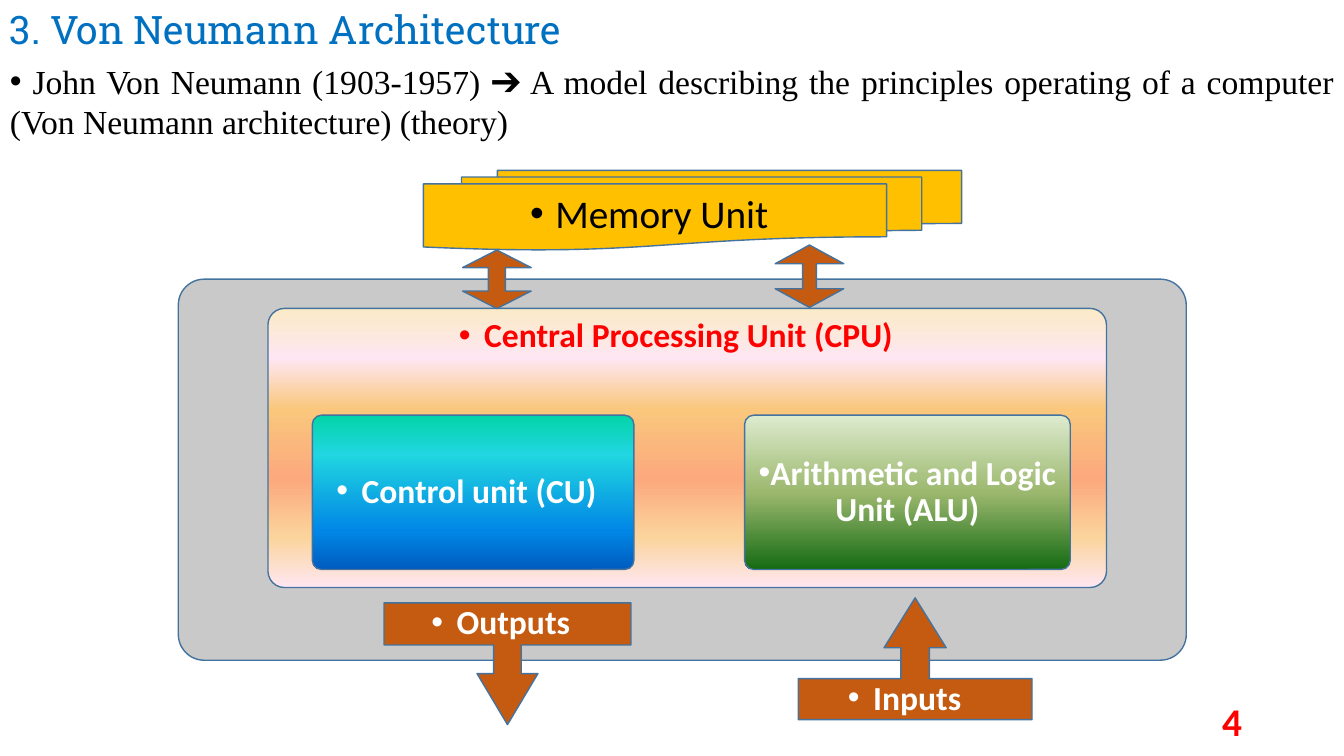
from lxml.etree import SubElement
from pptx import Presentation
from pptx.dml.color import RGBColor
from pptx.enum.shapes import MSO_SHAPE as Preset
from pptx.enum.text import MSO_ANCHOR as Anchor, PP_ALIGN as Align
from pptx.oxml.ns import qn
from pptx.util import Pt

SLIDE_WIDTH, SLIDE_HEIGHT = 960, 540
OUTLINE, GREY, ORANGE, GOLD = "43739E", "C9C9C9", "C55A11", "FFC000"
WHITE, BLACK, RED, BLUE = "FFFFFF", "000000", "FF0000", "0070C0"
CPU_STOPS = [(0, "FBEAC7"), (18, "FEE7F2"), (36, "FAC77D"),
             (61, "FBA97D"), (82, "FBD49C"), (100, "FEE7F2")]
ALU_STOPS = [(0, "DDEBCF"), (50, "9CB86E"), (100, "156B13")]
CONTROL_STOPS = [(0, "03D4A8"), (25, "21D6E0"), (75, "0087E6"), (100, "005CBF")]


def color(hex_string):
    return RGBColor.from_string(hex_string)


def set_gradient(shape, stops):
    """Vertical gradient running from the top to the bottom."""
    shape.fill.gradient()
    shape.fill.gradient_angle = 270
    stop_list = shape.fill._xPr.find(qn("a:gradFill")).find(qn("a:gsLst"))
    for stop in list(stop_list):
        stop_list.remove(stop)
    for percent, value in stops:
        stop = SubElement(stop_list, qn("a:gs"), pos=str(percent * 1000))
        SubElement(stop, qn("a:srgbClr"), val=value)


def write(shape, text, size, ink, font="Calibri", bold=False, align=Align.CENTER,
          anchor=Anchor.MIDDLE, bullet=True, hanging=18, spacing=0.9):
    frame = shape.text_frame
    frame.word_wrap = True
    frame.vertical_anchor = anchor
    paragraph = frame.paragraphs[0]
    paragraph.alignment = align
    paragraph.line_spacing = spacing
    if bullet:
        properties = paragraph._p.get_or_add_pPr()
        properties.set("marL", "0")
        properties.set("indent", str(-Pt(hanging)))
        SubElement(properties, qn("a:buFont"), typeface="Arial")
        SubElement(properties, qn("a:buChar"), char="•")
    run = paragraph.add_run()
    run.text = text
    run.font.name = font
    run.font.size = Pt(size)
    run.font.bold = bold
    run.font.color.rgb = color(ink)


def paint(shape, fill):
    """Outline the shape; fill is one colour or a list of gradient stops."""
    shape.shadow.inherit = False
    if isinstance(fill, str):
        shape.fill.solid()
        shape.fill.fore_color.rgb = color(fill)
    else:
        set_gradient(shape, fill)
    shape.line.color.rgb = color(OUTLINE)
    shape.line.width = Pt(1)


def add_block(slide, preset, box, fill, adjustments=()):
    shape = slide.shapes.add_shape(preset, *map(Pt, box))
    for index, value in enumerate(adjustments):
        shape.adjustments[index] = value
    paint(shape, fill)
    return shape


def add_two_way_arrow(slide, left, top, width, height, shaft_share, head_share=0.3):
    """Vertical arrow with a head at both ends; its right side mirrors its left."""
    center, bottom = left + width / 2, top + height
    shaft, head = width * shaft_share / 2, height * head_share
    side = [(width / 2, top + head), (shaft, top + head),
            (shaft, bottom - head), (width / 2, bottom - head)]
    points = [(center + reach, y) for reach, y in side] + [(center, bottom)]
    points += [(center - reach, y) for reach, y in reversed(side)]
    builder = slide.shapes.build_freeform(Pt(center), Pt(top))
    builder.add_line_segments([(Pt(x), Pt(y)) for x, y in points], close=True)
    paint(builder.convert_to_shape(), ORANGE)


def add_label(slide, box, text, size, ink, **style):
    write(slide.shapes.add_textbox(*map(Pt, box)), text, size, ink, **style)


def add_cpu(slide, left, top, width, height):
    add_block(slide, Preset.ROUNDED_RECTANGLE, (left, top, width, height),
              CPU_STOPS, [0.059])
    # Arithmetic and control units side by side
    units = [("Arithmetic and Logic Unit (ALU)", 340.5, 232.6, ALU_STOPS, 0),
             ("Control unit (CU)", 31.7, 229.7, CONTROL_STOPS, 18)]
    for text, offset, unit_width, stops, hanging in units:
        unit = add_block(slide, Preset.ROUNDED_RECTANGLE,
                         (left + offset, top + 76.3, unit_width, 110.2), stops, [0.059])
        write(unit, text, 24, WHITE, bold=True, hanging=hanging)
    add_label(slide, (left + 41, top + 3.6, 510.5, 36), "Central Processing Unit (CPU)",
              24, RED, bold=True, anchor=Anchor.TOP)


def add_ports(slide, left, top):
    """Input and output callouts on the lower edge of the computer."""
    ports = [("Inputs ", Preset.UP_ARROW_CALLOUT, 442.8, 227.6, 167,
              [0.233, 0.255, 0.41, 0.336]),
             ("Outputs", Preset.DOWN_ARROW_CALLOUT, 146.9, 231.2, 176.4,
              [0.227, 0.25, 0.419, 0.346])]
    for text, preset, across, down, width, adjustments in ports:
        port = add_block(slide, preset, (left + across, top + down, width, 87),
                         ORANGE, adjustments)
        write(port, text, 24, WHITE, bold=True)


def add_memory(slide, left, top, width, height):
    memory = add_block(slide, Preset.FLOWCHART_MULTIDOCUMENT,
                       (left, top, width, height), GOLD)
    write(memory, "Memory Unit", 28, BLACK)
    # Two-way arrows between memory and CPU
    for across, down, length, shaft in [(251.3, 53.3, 44.6, 0.2), (28, 56.9, 41.8, 0.25)]:
        add_two_way_arrow(slide, left + across, top + down, 49, length, shaft)


def add_computer(slide, left, top, width, height):
    add_block(slide, Preset.ROUNDED_RECTANGLE, (left, top, width, height), GREY, [0.068])
    add_cpu(slide, left + 64, top + 20.9, 599, 199.4)
    add_ports(slide, left, top)
    add_memory(slide, left + 175, top - 77.7, 384.5, 56.9)


def add_texts(slide, left, top, width):
    # Page number
    add_label(slide, (left + 678.2, top + 500.4, 216, 28.8), "4", 28, RED, bold=True,
              align=Align.RIGHT, bullet=False, spacing=1)
    # Title and introduction
    add_label(slide, (left, top, width, 41), "3. Von Neumann Architecture", 28, BLUE,
              font="Roboto Slab", align=Align.LEFT, anchor=Anchor.TOP, bullet=False,
              spacing=1)
    add_label(slide, (left, top + 39.6, width, 65.5),
              " John Von Neumann (1903-1957) ➔ A model describing the principles "
              "operating of a computer (Von Neumann architecture) (theory)",
              24, BLACK, font="Times New Roman", align=Align.JUSTIFY, hanging=0, spacing=1)


def main():
    presentation = Presentation()
    presentation.slide_width = Pt(SLIDE_WIDTH)
    presentation.slide_height = Pt(SLIDE_HEIGHT)
    slide = presentation.slides.add_slide(presentation.slide_layouts[6])
    add_computer(slide, 127.4, 199.4, 720, 272.2)
    add_texts(slide, 0, 0, SLIDE_WIDTH)
    presentation.save("out.pptx")


if __name__ == "__main__":
    main()
